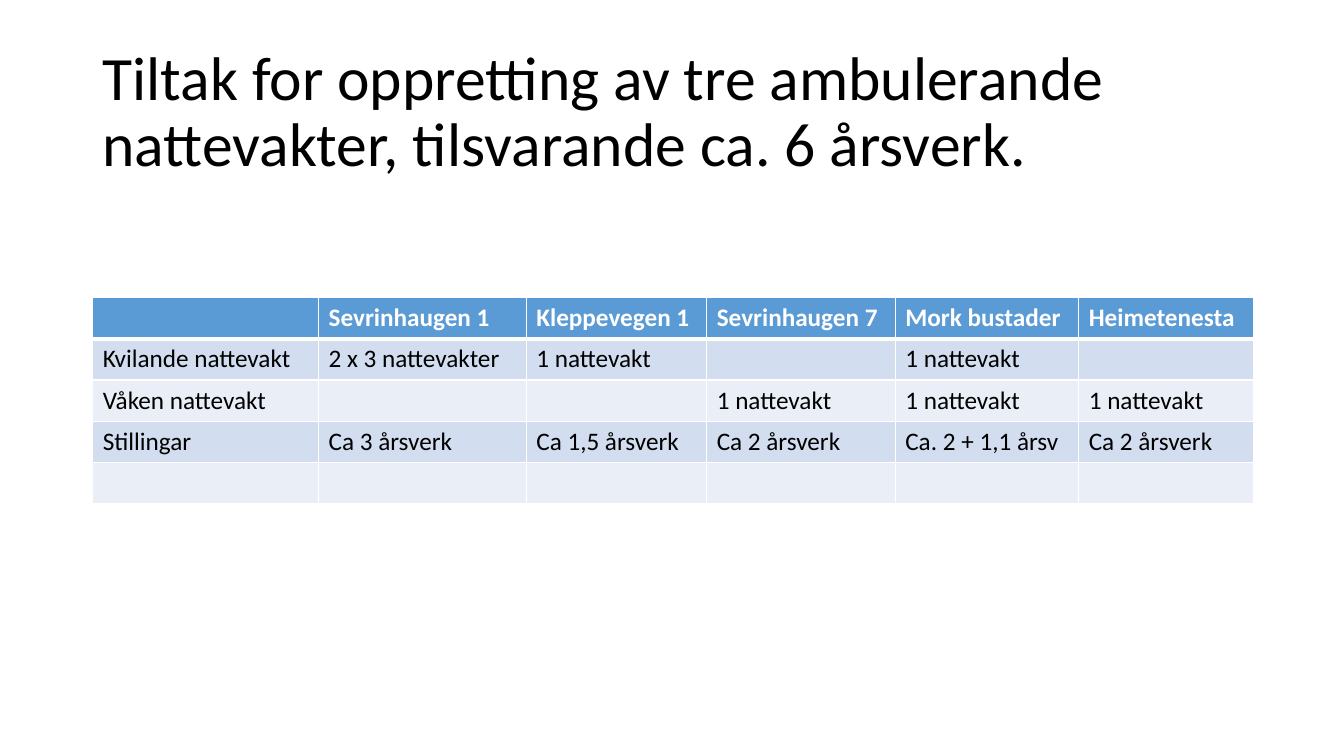
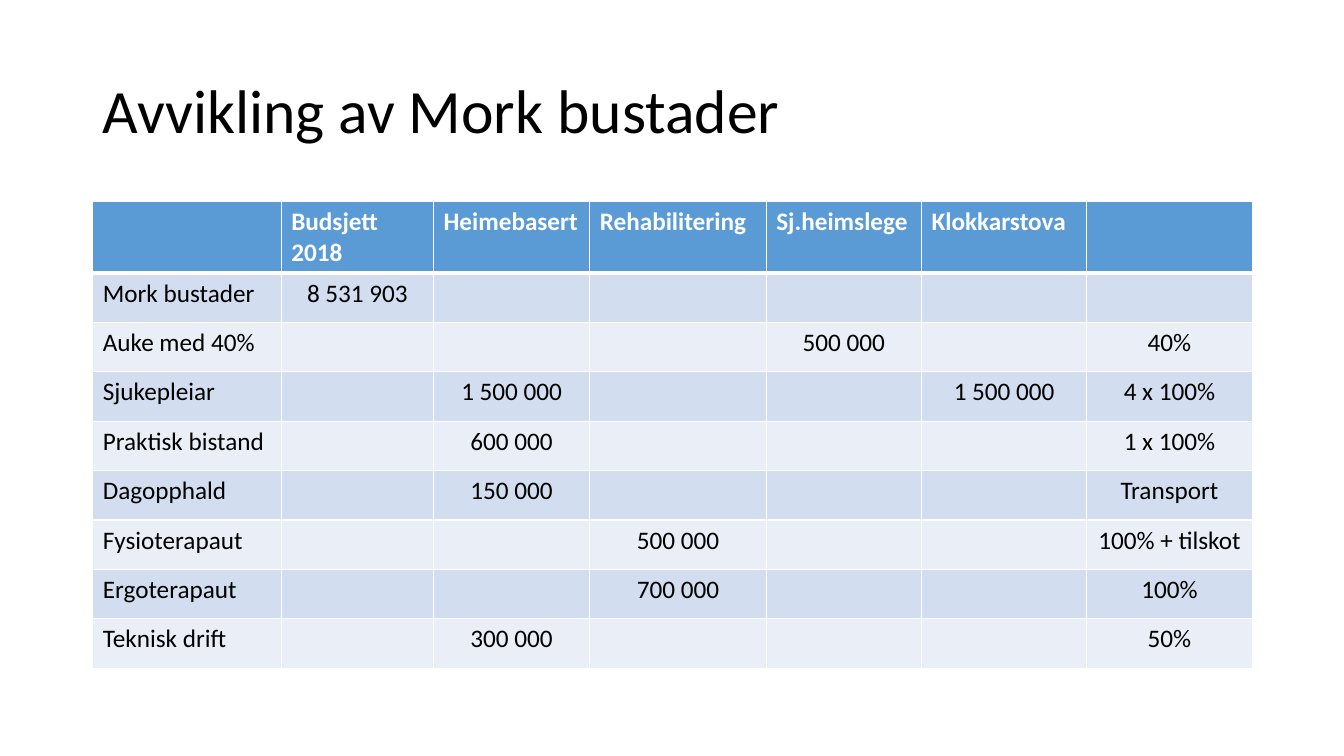
from lxml import etree
from pptx import Presentation
from pptx import util as u
from pptx.dml import color
from pptx.enum import text
from pptx.oxml import ns

COLORS = {
    "text": "000000",
    "white": "FFFFFF",
    "header": "5B9BD5",
    "odd": "D2DEEF",
    "even": "EAEFF7",
}
FONT = "Calibri"
LEFT, WIDTH = 0.92, 11.5

NIGHT_WATCH_ROWS = [
    ["", "Sevrinhaugen 1", "Kleppevegen 1", "Sevrinhaugen 7", "Mork bustader", "Heimetenesta"],
    ["Kvilande nattevakt", "2 x 3 nattevakter", "1 nattevakt", "", "1 nattevakt", ""],
    ["Våken nattevakt", "", "", "1 nattevakt", "1 nattevakt", "1 nattevakt"],
    ["Stillingar", "Ca 3 årsverk", "Ca 1,5 årsverk", "Ca 2 årsverk", "Ca. 2 + 1,1 årsv", "Ca 2 årsverk"],
    ["", "", "", "", "", ""],
]

BUDGET_ROWS = [
    ["", "Budsjett 2018", "Heimebasert", "Rehabilitering", "Sj.heimslege", "Klokkarstova", ""],
    ["Mork bustader", "8 531 903", "", "", "", "", ""],
    ["Auke med 40%", "", "", "", "500 000", "", "40%"],
    ["Sjukepleiar", "", "1 500 000", "", "", "1 500 000", "4 x 100%"],
    ["Praktisk bistand", "", "600 000", "", "", "", "1 x 100%"],
    ["Dagopphald", "", "150 000", "", "", "", "Transport"],
    ["Fysioterapaut", "", "", "500 000", "", "", "100% + tilskot"],
    ["Ergoterapaut", "", "", "700 000", "", "", "100%"],
    ["Teknisk drift", "", "300 000", "", "", "", "50%"],
]


def rgb(name):
    return color.RGBColor.from_string(COLORS[name])


def format_runs(paragraph, size, color_name, bold=False):
    for run in paragraph.runs:
        run.font.name = FONT
        run.font.size = u.Pt(size)
        run.font.bold = bold
        run.font.color.rgb = rgb(color_name)


def add_title(slide, title):
    shape = slide.shapes.add_textbox(u.Inches(LEFT), u.Inches(0.4), u.Inches(WIDTH), u.Inches(1.45))
    frame = shape.text_frame
    frame.word_wrap = True
    frame.vertical_anchor = text.MSO_ANCHOR.MIDDLE
    frame.text = title
    paragraph = frame.paragraphs[0]
    paragraph.line_spacing = 0.9
    format_runs(paragraph, 44, "text")


def set_borders(cell, top, bottom):
    properties = cell._tc.get_or_add_tcPr()
    for side, points in (("L", 1), ("R", 1), ("T", top), ("B", bottom)):
        line = etree.SubElement(properties, ns.qn(f"a:ln{side}"), w=str(u.Pt(points)))
        fill = etree.SubElement(line, ns.qn("a:solidFill"))
        etree.SubElement(fill, ns.qn("a:srgbClr"), val=COLORS["white"])


def style_cell(cell, row, column, center_values):
    header = row == 0
    set_borders(cell, top=3 if row == 1 else 1, bottom=3 if header else 1)
    cell.fill.solid()
    cell.fill.fore_color.rgb = rgb("header" if header else "odd" if row % 2 else "even")
    paragraph = cell.text_frame.paragraphs[0]
    if center_values and not header and column > 0:
        paragraph.alignment = text.PP_ALIGN.CENTER
    format_runs(paragraph, 18, "white" if header else "text", bold=header)


def add_data_table(slide, rows, top, widths, header_height, row_height, center_values=False):
    heights = [header_height] + [row_height] * (len(rows) - 1)
    shape = slide.shapes.add_table(
        len(rows), len(widths), u.Inches(LEFT), u.Inches(top), u.Inches(WIDTH), u.Inches(sum(heights))
    )
    table = shape.table
    table.first_row = False
    table.horz_banding = False
    for column, width in zip(table.columns, widths):
        column.width = u.Inches(width)
    for table_row, height in zip(table.rows, heights):
        table_row.height = u.Inches(height)
    for row, values in enumerate(rows):
        for column, value in enumerate(values):
            cell = table.cell(row, column)
            cell.text_frame.text = value
            style_cell(cell, row, column, center_values)


def add_table_slide(presentation, title, rows, **layout):
    slide = presentation.slides.add_slide(presentation.slide_layouts[6])
    add_title(slide, title)
    add_data_table(slide, rows, **layout)


def main():
    presentation = Presentation()
    presentation.slide_width = u.Inches(13.33)
    presentation.slide_height = u.Inches(7.5)
    add_table_slide(
        presentation,
        "Tiltak for oppretting av tre ambulerande nattevakter, tilsvarande ca. 6 årsverk.",
        NIGHT_WATCH_ROWS,
        top=2.95,
        widths=[2.24, 2.06, 1.79, 1.87, 1.82, 1.73],
        header_height=0.41,
        row_height=0.41,
    )
    add_table_slide(
        presentation,
        "Avvikling av Mork bustader",
        BUDGET_ROWS,
        top=2,
        widths=[1.87, 1.51, 1.55, 1.75, 1.54, 1.64, 1.64],
        header_height=0.71,
        row_height=0.49,
        center_values=True,
    )
    presentation.save("out.pptx")


if __name__ == "__main__":
    main()
